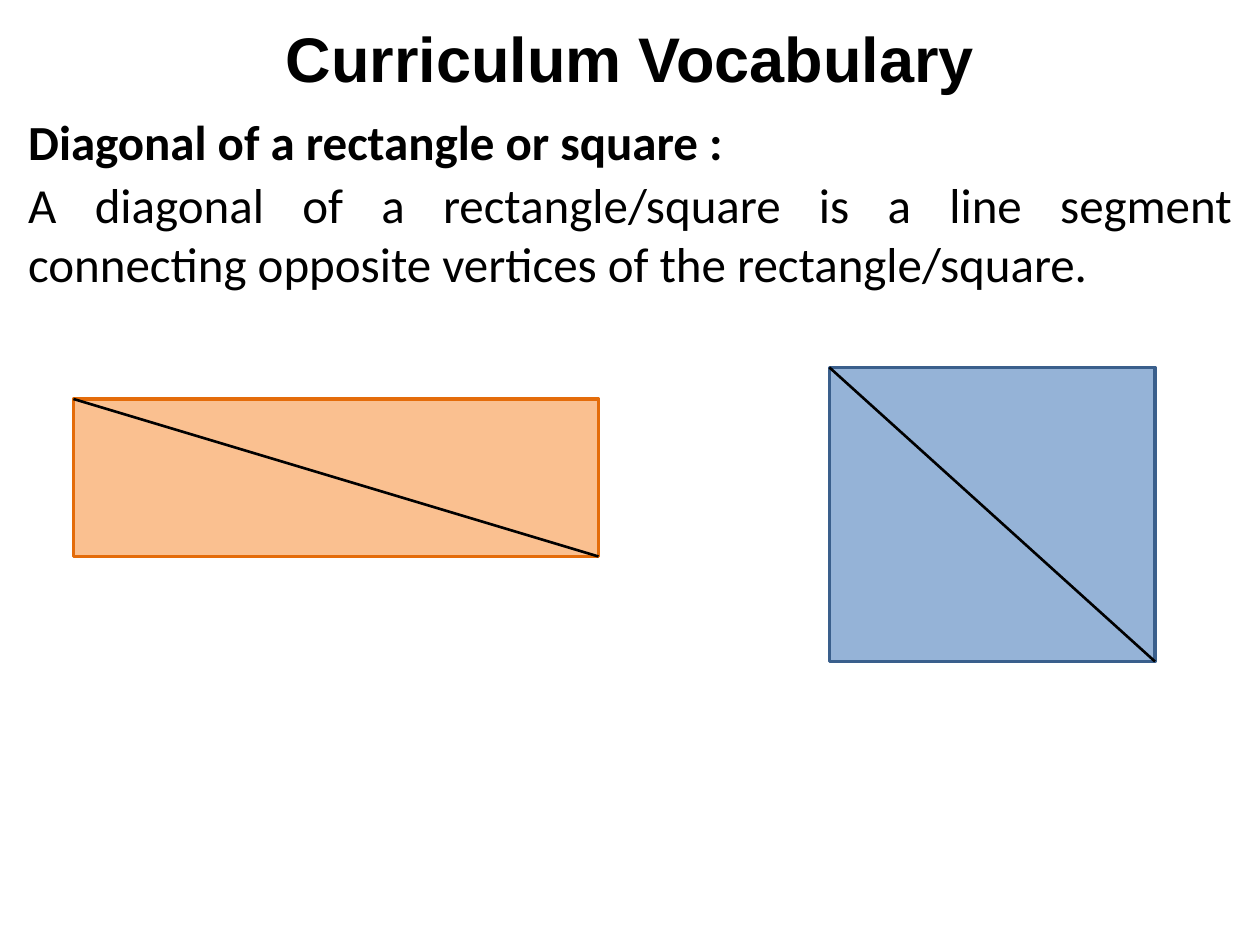
from lxml.etree import SubElement
from pptx import Presentation
from pptx.dml.color import RGBColor
from pptx.enum.shapes import MSO_CONNECTOR, MSO_SHAPE
from pptx.enum.text import MSO_ANCHOR, MSO_AUTO_SIZE, PP_ALIGN
from pptx.oxml.ns import qn
from pptx.util import Inches, Pt

COLUMNS, ROWS = 120, 90  # grid of twelfths of an inch
UNIT = Inches(1) // 12
COLORS = {
    "ink": "000000",
    "paper": "FFFFFF",
    "orange": "FAC090",
    "orange_edge": "E46C0A",
    "blue": "95B3D7",
    "blue_edge": "3A5F8C",
}


def color(name):
    return RGBColor.from_string(COLORS[name])


def grid(*cells):
    return [round(cell * UNIT) for cell in cells]


def add_text(page, box, text, size, font="Calibri", bold=False,
             align=PP_ALIGN.LEFT, anchor=MSO_ANCHOR.TOP, fit=MSO_AUTO_SIZE.SHAPE_TO_FIT_TEXT):
    frame = page.shapes.add_textbox(*grid(*box)).text_frame
    frame.word_wrap = True
    frame.auto_size = fit
    frame.vertical_anchor = anchor
    para = frame.paragraphs[0]
    para.text = text
    para.alignment = align
    span = para.runs[0]
    span.font.name = font
    span.font.size = Pt(size)
    span.font.bold = bold
    span.font.color.rgb = color("ink")


def add_title(page, box):
    add_text(page, box, "Curriculum Vocabulary", 36, font="Arial", bold=True,
             align=PP_ALIGN.CENTER, anchor=MSO_ANCHOR.MIDDLE, fit=MSO_AUTO_SIZE.NONE)


def add_definition(page, box):
    left, top, width, height = box
    term_rows, meaning_offset = 6.8, 6
    add_text(page, (left, top, width, term_rows),
             "Diagonal of a rectangle or square :", 28, bold=True)
    add_text(page, (left, top + meaning_offset, width, height - meaning_offset),
             "A diagonal of a rectangle/square is a line segment connecting "
             "opposite vertices of the rectangle/square.", 28, align=PP_ALIGN.JUSTIFY)


def add_figure(page, box, fill):
    """Draw a four-sided figure with its diagonal."""
    left, top, width, height = grid(*box)
    figure = page.shapes.add_shape(MSO_SHAPE.RECTANGLE, left, top, width, height)
    figure.shadow.inherit = False
    figure.fill.solid()
    figure.fill.fore_color.rgb = color(fill)
    figure.line.color.rgb = color(fill + "_edge")
    figure.line.width = Pt(2)

    diagonal = page.shapes.add_connector(
        MSO_CONNECTOR.STRAIGHT, left, top, left + width, top + height)
    diagonal.line.color.rgb = color("ink")
    diagonal.line.width = Pt(1.5)
    SubElement(diagonal._element.spPr, qn("a:effectLst"))


def main():
    deck = Presentation()
    deck.slide_width, deck.slide_height = grid(COLUMNS, ROWS)
    page = deck.slides.add_slide(deck.slide_layouts[6])
    page.background.fill.solid()
    page.background.fill.fore_color.rgb = color("paper")

    # Heading and definition
    add_title(page, (3, 1, COLUMNS - 6, 9))
    add_definition(page, (1.5, 10, COLUMNS - 3, 18.5))

    # Square and rectangle
    add_figure(page, (79, 35, 31, 28), "blue")
    add_figure(page, (7, 38, 50, 15), "orange")

    deck.save("out.pptx")


if __name__ == "__main__":
    main()
